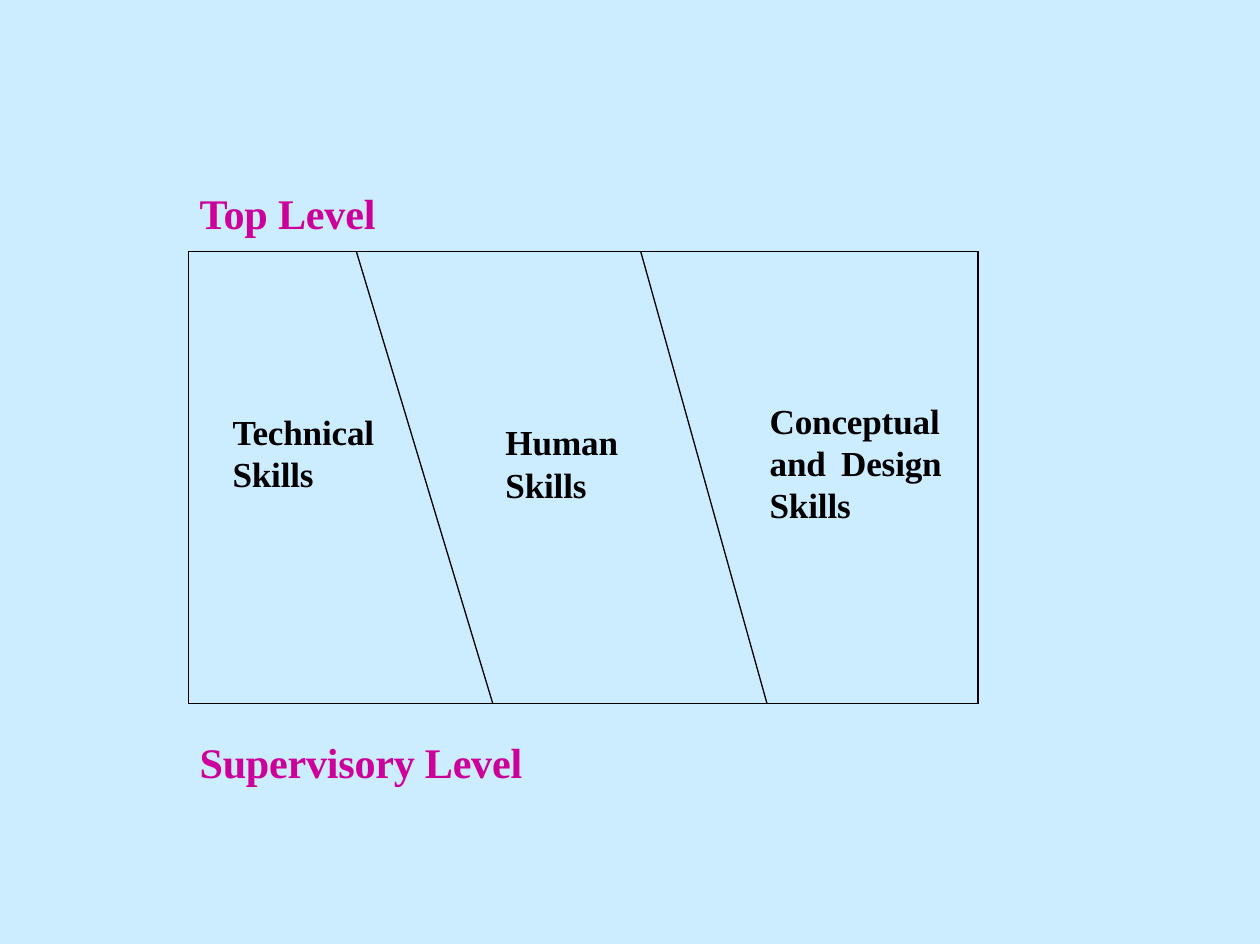
from dataclasses import dataclass

from pptx import Presentation
from pptx.dml.color import RGBColor as RGB
from pptx.enum.shapes import MSO_CONNECTOR as CONN, MSO_SHAPE as SHAPE
from pptx.enum.text import MSO_AUTO_SIZE as AUTO, PP_ALIGN as ALIGN
from pptx.oxml.ns import qn
from pptx.util import Inches, Pt


@dataclass(frozen=True)
class Theme:
    """Colours, type sizes and line width of the slide."""
    font: str = "Times New Roman"
    background: RGB = RGB(0xCC, 0xEC, 0xFF)
    level: RGB = RGB(0xCC, 0x00, 0x9A)
    ink: RGB = RGB(0x00, 0x00, 0x00)
    level_size: int = 24
    skill_size: int = 20
    line_width: float = 0.75


def write(tf, text, *, font, size, color, align=ALIGN.LEFT, spacing=-0.1):
    """Fill a text frame with one bold paragraph, spacing in points."""
    tf.word_wrap = True
    tf.auto_size = AUTO.SHAPE_TO_FIT_TEXT
    tf.margin_left = tf.margin_right = tf.margin_top = tf.margin_bottom = 0
    p = tf.paragraphs[0]
    p.alignment = align
    r = p.add_run()
    r.text = text
    r.font.name, r.font.size, r.font.bold = font, Pt(size), True
    r.font.color.rgb = color
    r.font._element.set("spc", str(round(spacing * 100)))


class SkillsSlide:
    """Draws elements on one slide in one theme."""

    def __init__(self, prs, theme):
        """Add a blank slide."""
        self.theme = theme
        self.s = prs.slides.add_slide(prs.slide_layouts[6])

    def backdrop(self, width, height):
        """Add a plain panel behind everything else."""
        sp = self.s.shapes.add_shape(SHAPE.RECTANGLE, 0, 0, width, height)
        sp.shadow.inherit = False
        sp.fill.solid()
        sp.fill.fore_color.rgb = self.theme.background
        sp.line.fill.background()

    def line(self, x1, y1, x2, y2):
        """Add a straight line."""
        sp = self.s.shapes.add_connector(CONN.STRAIGHT, *map(Inches, (x1, y1, x2, y2)))
        sp._element.spPr.append(sp._element.makeelement(qn("a:effectLst"), {}))
        sp.line.color.rgb = self.theme.ink
        sp.line.width = Pt(self.theme.line_width)

    def label(self, text, left, top, width, height, **style):
        """Add a text box."""
        sp = self.s.shapes.add_textbox(*map(Inches, (left, top, width, height)))
        write(sp.text_frame, text, font=self.theme.font, **style)


def main():
    """Build the skills by management level slide."""
    prs = Presentation()
    prs.slide_width, prs.slide_height = Inches(9.97), Inches(7.47)
    theme = Theme()
    slide = SkillsSlide(prs, theme)
    slide.backdrop(prs.slide_width, prs.slide_height)

    left, top, right, bottom = 1.49, 1.99, 7.74, 5.57
    for x_top, x_bottom in ((left, left), (2.82, 3.9), (5.07, 6.07), (right, right)):
        slide.line(x_top, top, x_bottom, bottom)
    for y in (top, bottom):
        slide.line(left, y, right, y)

    for text, y, w, spacing in (("Top Level", 1.48, 1.46, -0.1),
                                ("Supervisory Level", 5.83, 2.61, -0.15)):
        slide.label(text, 1.58, y, w, 0.36, size=theme.level_size,
                    color=theme.level, spacing=spacing)

    for text, x, y, w, h, align in (
            ("Technical Skills", 1.84, 3.25, 1.16, 0.61, ALIGN.LEFT),
            ("Human Skills", 4, 3.33, 0.9, 0.61, ALIGN.LEFT),
            ("Conceptual and Design Skills", 6.09, 3.16, 1.36, 0.94, ALIGN.JUSTIFY)):
        slide.label(text, x, y, w, h, size=theme.skill_size,
                    color=theme.ink, align=align)

    prs.save("out.pptx")


if __name__ == "__main__":
    main()
